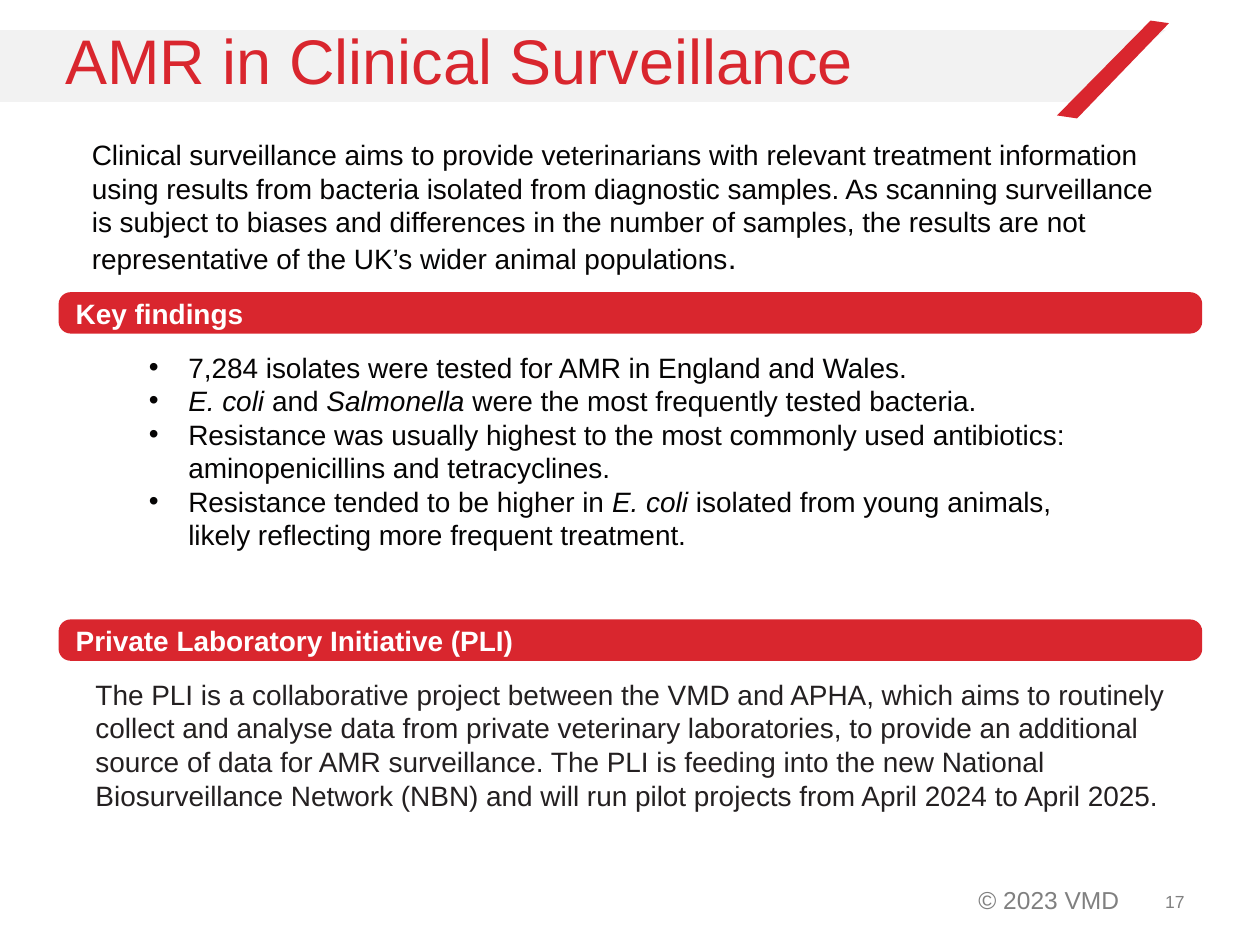
from pptx import Presentation
from pptx.dml.color import RGBColor
from pptx.enum.shapes import MSO_SHAPE as SHAPE
from pptx.enum.text import MSO_ANCHOR as ANCHOR, MSO_AUTO_SIZE as AUTO, PP_ALIGN as ALIGN
from pptx.oxml import parse_xml
from pptx.oxml.ns import nsdecls
from pptx.util import Pt

RED = RGBColor(0xD9, 0x26, 0x2E)
BAND = RGBColor(0xF2, 0xF2, 0xF2)
WHITE = RGBColor(0xFF, 0xFF, 0xFF)
BLACK = RGBColor(0x05, 0x04, 0x04)
INK = RGBColor(0x24, 0x20, 0x21)
GRAY = RGBColor(0x80, 0x80, 0x80)

INTRO = ("Clinical surveillance aims to provide veterinarians with relevant treatment "
         "information using results from bacteria isolated from diagnostic samples. As "
         "scanning surveillance is subject to biases and differences in the number of "
         "samples, the results are not representative of the UK’s wider animal populations")
FINDINGS = [
    [("7,284 isolates were tested for AMR in England and Wales.", {})],
    [("E. coli ", {"italic": True}), ("and ", {}), ("Salmonella ", {"italic": True}),
     ("were the most frequently tested bacteria.", {})],
    [("Resistance was usually highest to the most commonly used antibiotics: "
      "aminopenicillins and tetracyclines.", {})],
    [("Resistance tended to be higher in ", {}), ("E. coli ", {"italic": True}),
     ("isolated from young animals, likely reflecting more frequent treatment.", {})],
]
PLI = ("The PLI is a collaborative project between the VMD and APHA, which aims to "
       "routinely collect and analyse data from private veterinary laboratories, to provide "
       "an additional source of data for AMR surveillance. The PLI is feeding into the new "
       "National Biosurveillance Network (NBN) and will run pilot projects from April 2024 "
       "to April 2025.")


def points(box):
    return [Pt(v) for v in box]


def add_run(p, text, color, size=16, **fmt):
    r = p.add_run()
    r.text = text
    r.font.color.rgb = color
    for name, value in {"name": "Arial", "size": Pt(size), **fmt}.items():
        setattr(r.font, name, value)


def add_bullet(p, indent):
    pPr = p._p.get_or_add_pPr()
    pPr.set("marL", str(Pt(indent)))
    pPr.set("indent", str(-Pt(indent)))
    pPr.append(parse_xml(f'<a:buFont {nsdecls("a")} typeface="Arial"/>'))
    pPr.append(parse_xml(f'<a:buChar {nsdecls("a")} char="•"/>'))


def add_text(s, box, paragraphs, color, size=16, bullets=False, align=ALIGN.LEFT,
             anchor=ANCHOR.TOP, wrap=True):
    """Add a text box; each paragraph is a list of (text, font format) runs."""
    tf = s.shapes.add_textbox(*points(box)).text_frame
    tf.word_wrap, tf.auto_size, tf.vertical_anchor = wrap, AUTO.NONE, anchor
    for i, runs in enumerate(paragraphs):
        p = tf.add_paragraph() if i else tf.paragraphs[0]
        p.alignment = align
        if bullets:
            add_bullet(p, 22.5)
        for text, fmt in runs:
            add_run(p, text, color, **{"size": size, **fmt})


def paint(sp, color):
    sp.shadow.inherit = False
    sp.fill.solid()
    sp.fill.fore_color.rgb = color
    sp.line.fill.background()


def add_polygon(s, corners, color):
    start, *rest = [points(c) for c in corners]
    builder = s.shapes.build_freeform(*start)
    builder.add_line_segments(rest, close=True)
    paint(builder.convert_to_shape(), color)


def add_header(s, box, title):
    """Gray band with a slanted end, red slash and the slide title."""
    x, y, w, h = box
    slant_x = x + 259
    add_polygon(s, [(slant_x, y), (x + w, y), (x + w - 55.5, y + h), (slant_x, y + h)], BAND)
    for left, width in ((x + 204.5, 54.5), (x, 215)):
        paint(s.shapes.add_shape(SHAPE.RECTANGLE, *points((left, y, width, h))), BAND)
    right = x + w
    add_polygon(s, [(right - 8.5, y - 5.5), (right + 2, y - 4),
                    (right - 50.5, y + 50.4), (right - 62, y + 48.7)], RED)

    sp = s.shapes.title
    s.shapes._spTree.append(sp._element)  # bring the title in front of the band
    sp.left, sp.top, sp.width, sp.height = points((x + 37.4, y - 5, 612, 57))
    tf = sp.text_frame
    tf.word_wrap, tf.auto_size, tf.vertical_anchor = True, AUTO.NONE, ANCHOR.TOP
    for side in ("left", "top", "right", "bottom"):
        setattr(tf, f"margin_{side}", 0)
    tf.paragraphs[0].alignment = ALIGN.LEFT
    add_run(tf.paragraphs[0], title, RED, 36)


def add_heading_bar(s, box, text):
    sp = s.shapes.add_shape(SHAPE.ROUNDED_RECTANGLE, *points(box))
    sp.adjustments[0] = 0.27
    paint(sp, RED)
    sp.line.color.rgb = RED
    sp.line.width = Pt(2)
    tf = sp.text_frame
    tf.vertical_anchor = ANCHOR.MIDDLE
    tf.paragraphs[0].alignment = ALIGN.LEFT
    add_run(tf.paragraphs[0], text, WHITE, bold=True)


def add_section(s, box, heading, inset, paragraphs, color, bullets=False):
    """Red heading bar with body text below, inset from the left by inset."""
    x, y, w, h = box
    body_w = w - inset - 13 if not bullets else w - 2 * inset
    add_heading_bar(s, (x, y, w, 21.6), heading)
    add_text(s, (x + inset, y + 28.5, body_w, h - 28.5), paragraphs, color, bullets=bullets)


def add_footer(s, box):
    x, y, w, h = box
    add_text(s, (x, y, 96, 24.5), [[("© 2023 VMD", {})]], GRAY, size=14, wrap=False)
    add_text(s, (x + w - 168, y - 1.5, 168, h), [[("17", {})]], GRAY, size=10,
             align=ALIGN.RIGHT, anchor=ANCHOR.MIDDLE)


def main():
    prs = Presentation()
    prs.slide_width, prs.slide_height = Pt(720), Pt(540)
    s = prs.slides.add_slide(prs.slide_layouts[5])
    add_footer(s, (552, 502, 132, 29))
    add_text(s, (45.4, 75, 629.5, 87), [[(INTRO, {}), (".", {"size": 18})]], BLACK)
    add_header(s, (0, 17.3, 666, 41), "AMR in Clinical Surveillance")
    add_section(s, (34.5, 168, 651.5, 174), "Key findings", 43.5, FINDINGS, BLACK, bullets=True)
    add_section(s, (34.5, 355, 651.5, 133), "Private Laboratory Initiative (PLI)", 13,
                [[(PLI, {})]], INK)
    prs.save("out.pptx")


if __name__ == "__main__":
    main()
